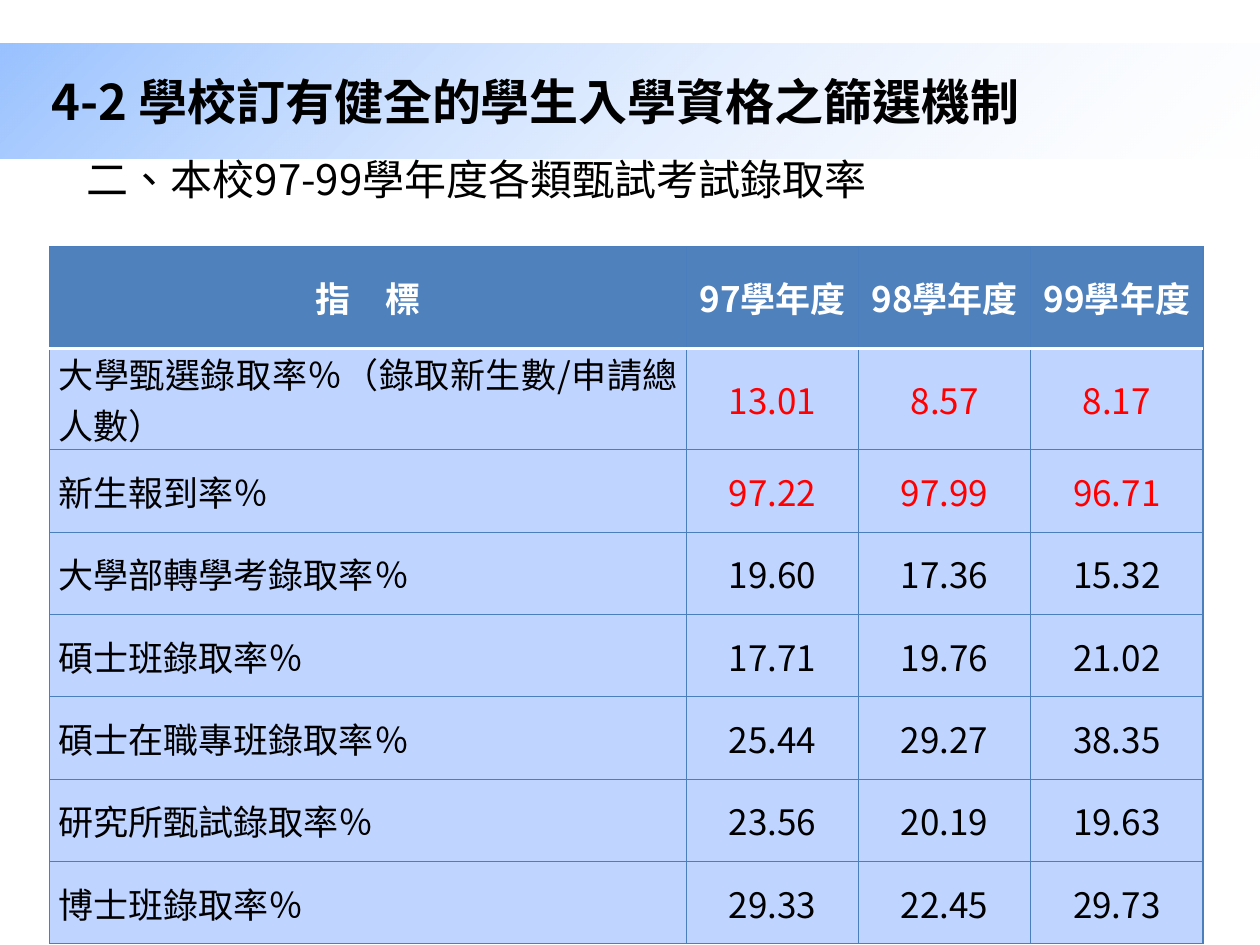
from lxml.etree import SubElement
from pptx import Presentation
from pptx.dml.color import RGBColor
from pptx.enum.shapes import MSO_SHAPE
from pptx.enum.text import MSO_ANCHOR, PP_ALIGN
from pptx.oxml import parse_xml
from pptx.oxml.ns import nsdecls, qn
from pptx.util import Cm, Pt

FONT = "Noto Sans CJK SC"


def rgb(value):
    return RGBColor.from_string(value)


def write(tf, text, size, color="000000", bold=False, align=PP_ALIGN.LEFT):
    tf.word_wrap = True
    p = tf.paragraphs[0]
    r = p.add_run()
    r.text = text
    r._r.get_or_add_rPr().set("lang", "zh-TW")
    p.alignment = align
    p.font.size = Pt(size)
    p.font.bold = bold
    p.font.name = FONT
    p.font.color.rgb = rgb(color)
    SubElement(p._p.pPr.find(qn("a:defRPr")), qn("a:ea"), typeface=FONT)


prs = Presentation()
prs.slide_width, prs.slide_height = Cm(25.4), Cm(19.05)
s = prs.slides.add_slide(prs.slide_layouts[6])

band = s.shapes.add_shape(MSO_SHAPE.RECTANGLE, 0, Cm(0.88), Cm(25.4), Cm(2.32))
band.shadow.inherit = False
band.line.fill.background()
band.fill.background()
no_fill = band._element.spPr.find(qn("a:noFill"))
no_fill.getparent().replace(no_fill, parse_xml(
    f'<a:gradFill {nsdecls("a")} rotWithShape="1"><a:gsLst>'
    '<a:gs pos="0"><a:srgbClr val="FFFFFF"><a:alpha val="15000"/></a:srgbClr></a:gs>'
    '<a:gs pos="100000"><a:srgbClr val="5E9EFF"><a:alpha val="63000"/></a:srgbClr></a:gs>'
    '</a:gsLst><a:path path="circle"><a:fillToRect l="100000" t="100000"/></a:path>'
    '</a:gradFill>'))

subtitle = s.shapes.add_textbox(Cm(1.5), Cm(2.97), Cm(22.6), Cm(1.57))
write(subtitle.text_frame, "二、本校97-99學年度各類甄試考試錄取率", 24)

rows = [
    ("指　標", "97學年度", "98學年度", "99學年度"),
    ("大學甄選錄取率％（錄取新生數/申請總人數）", "13.01", "8.57", "8.17"),
    ("新生報到率％", "97.22", "97.99", "96.71"),
    ("大學部轉學考錄取率％", "19.60", "17.36", "15.32"),
    ("碩士班錄取率％", "17.71", "19.76", "21.02"),
    ("碩士在職專班錄取率％", "25.44", "29.27", "38.35"),
    ("研究所甄試錄取率％", "23.56", "20.19", "19.63"),
    ("博士班錄取率％", "29.33", "22.45", "29.73"),
]
table = s.shapes.add_table(len(rows), 4, Cm(1), Cm(4.97), Cm(23.25), Cm(14.06)).table
table.first_row = table.horz_banding = False
for col, width in zip(table.columns, (12.84, 3.47, 3.47, 3.47)):
    col.width = Cm(width)

for i, row in enumerate(rows):
    table.rows[i].height = Cm(2.05 if i < 2 else 1.66)
    for j, text in enumerate(row):
        cell = table.cell(i, j)
        cell.vertical_anchor = MSO_ANCHOR.MIDDLE
        cell.margin_left = cell.margin_right = Cm(0.18)
        cell.margin_top = cell.margin_bottom = 0
        cell.fill.solid()
        cell.fill.fore_color.rgb = rgb("BFD4FF" if i else "4F81BD")
        if i == 0:
            color = "FFFFFF"
        else:
            color = "FF0000" if j and i < 3 else "000000"
        align = PP_ALIGN.JUSTIFY if i and j == 0 else PP_ALIGN.CENTER
        write(cell.text_frame, text, 20, color, i == 0, align)
        for k, side in enumerate(("lnL", "lnR", "lnT", "lnB")):
            divider = (i, side) in ((0, "lnB"), (1, "lnT"))
            line, width = ("FFFFFF", 2) if divider else ("4B7EBC", 0.75)
            cell._tc.tcPr.insert(k, parse_xml(
                f'<a:{side} {nsdecls("a")} w="{Pt(width)}"><a:solidFill>'
                f'<a:srgbClr val="{line}"/></a:solidFill></a:{side}>'))

title = s.shapes.add_textbox(Cm(0.79), Cm(1.54), Cm(22.9), Cm(1))
title.text_frame.vertical_anchor = MSO_ANCHOR.MIDDLE
write(title.text_frame, "4-2 學校訂有健全的學生入學資格之篩選機制", 28, bold=True)

prs.save("out.pptx")
